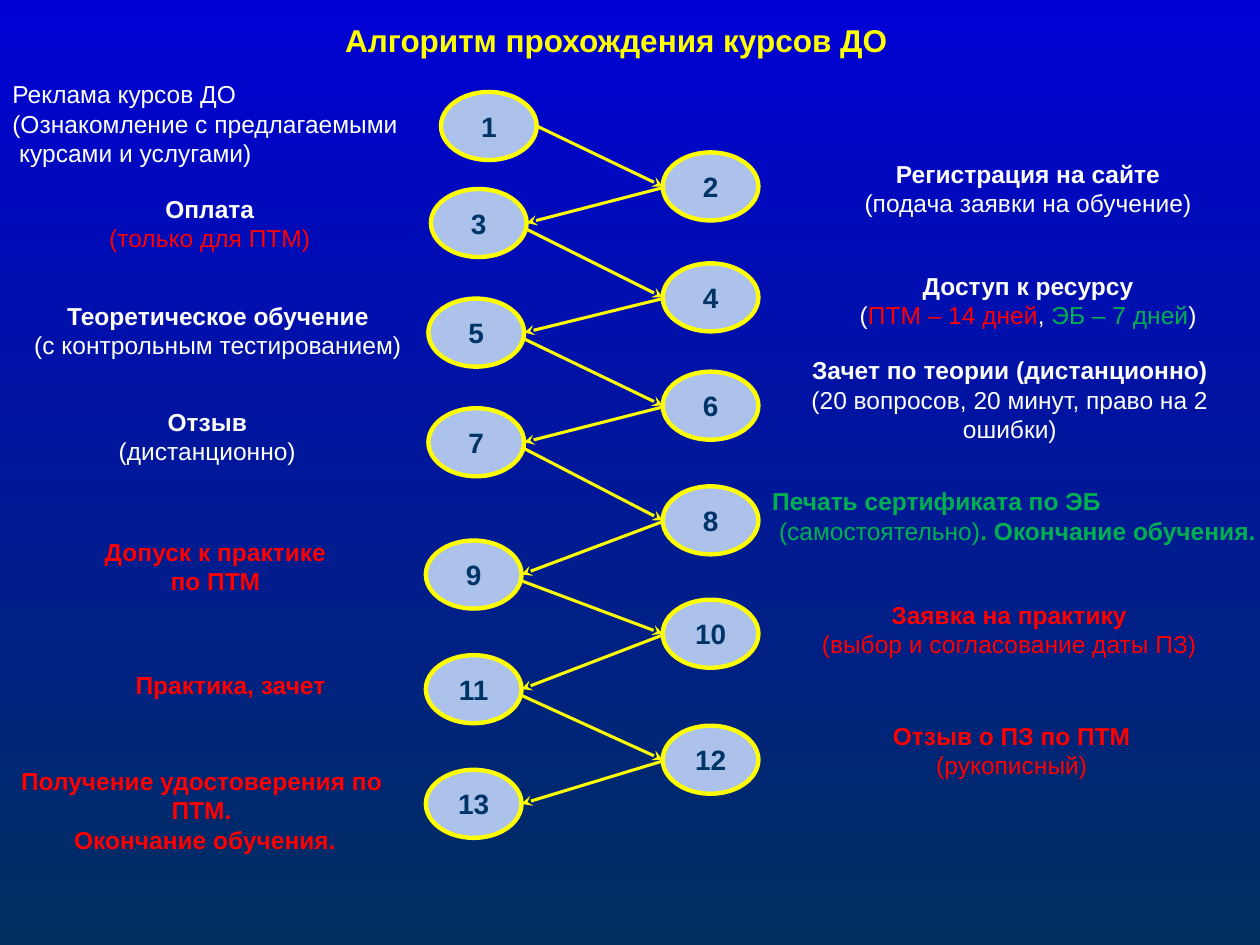
from dataclasses import dataclass
from itertools import pairwise

import pptx
import pptx.dml.color
import pptx.enum.shapes
import pptx.enum.text
import pptx.oxml
import pptx.oxml.ns
import pptx.util

Inches = pptx.util.Inches
Pt = pptx.util.Pt
ALIGN = pptx.enum.text.PP_ALIGN

WHITE, YELLOW, RED, GREEN = "FFFFFF", "FFFF00", "FF0000", "00B050"
NODE_FILL, NODE_TEXT = "ADC2EB", "003366"
NODE_W, NODE_H = 0.76, 0.54
RIGHT_X = 5.26


@dataclass
class Span:
    text: str
    color: str = WHITE
    bold: bool = False


@dataclass
class Label:
    left: float
    top: float
    width: float
    height: float
    lines: list[list[Span]]
    centered: bool = True
    wrap: bool = True
    size: int = 14


@dataclass
class Node:
    number: int
    left: float
    top: float

    @property
    def middle(self) -> float:
        return self.top + NODE_H / 2


def rgb(color: str) -> pptx.dml.color.RGBColor:
    return pptx.dml.color.RGBColor.from_string(color)


def set_font(font, size: int, color: str, bold: bool) -> None:
    font.name = "Arial"
    font.size = Pt(size)
    font.bold = bold
    font.color.rgb = rgb(color)


def set_background(slide) -> None:
    fill = slide.background.fill
    fill.gradient()
    fill.gradient_angle = 270
    for stop, position, color in zip(fill.gradient_stops, (0, 1), ("0000D4", "002F5E")):
        stop.position = position
        stop.color.rgb = rgb(color)


def add_label(slide, label: Label) -> None:
    sp = slide.shapes.add_textbox(
        Inches(label.left), Inches(label.top), Inches(label.width), Inches(label.height)
    )
    tf = sp.text_frame
    tf.word_wrap = label.wrap
    tf.auto_size = pptx.enum.text.MSO_AUTO_SIZE.SHAPE_TO_FIT_TEXT
    for i, spans in enumerate(label.lines):
        p = tf.add_paragraph() if i else tf.paragraphs[0]
        p.alignment = ALIGN.CENTER if label.centered else ALIGN.LEFT
        for span in spans:
            r = p.add_run()
            r.text = span.text
            font = p.font if len(spans) == 1 else r.font
            set_font(font, label.size, span.color, span.bold)


def add_node(slide, node: Node) -> None:
    sp = slide.shapes.add_shape(
        pptx.enum.shapes.MSO_SHAPE.OVAL,
        Inches(node.left), Inches(node.top), Inches(NODE_W), Inches(NODE_H),
    )
    sp.shadow.inherit = False
    sp.fill.solid()
    sp.fill.fore_color.rgb = rgb(NODE_FILL)
    sp.line.color.rgb = rgb(YELLOW)
    sp.line.width = Pt(2.5)
    tf = sp.text_frame
    tf.vertical_anchor = pptx.enum.text.MSO_ANCHOR.MIDDLE
    p = tf.paragraphs[0]
    p.alignment = ALIGN.CENTER
    p.add_run().text = str(node.number)
    set_font(p.font, 16, NODE_TEXT, True)


def add_arrow(slide, start: Node, end: Node) -> None:
    if start.left < end.left:
        drop = 0.05 if start.number > 1 else 0
        x1, y1 = start.left + NODE_W, start.middle + drop
        x2, y2 = end.left, end.middle
    else:
        x1, y1 = start.left, start.middle + 0.01
        x2, y2 = end.left + NODE_W, end.middle
    cxn = slide.shapes.add_connector(
        pptx.enum.shapes.MSO_CONNECTOR.STRAIGHT,
        Inches(x1), Inches(y1), Inches(x2), Inches(y2),
    )
    cxn.line.color.rgb = rgb(YELLOW)
    cxn.line.width = Pt(1.75)
    tail = pptx.oxml.parse_xml(
        f'<a:tailEnd {pptx.oxml.ns.nsdecls("a")} type="stealth"/>'
    )
    cxn.line._get_or_add_ln().append(tail)
    effects = pptx.oxml.parse_xml(f'<a:effectLst {pptx.oxml.ns.nsdecls("a")}/>')
    cxn._element.spPr.append(effects)


def heading(text: str, color: str = WHITE) -> list[Span]:
    return [Span(text, color, True)]


def detail(text: str, color: str = WHITE) -> list[Span]:
    return [Span(text, color)]


NODES = [
    Node(number, left, top)
    for number, (left, top) in enumerate(
        [
            (3.5, 0.73), (RIGHT_X, 1.21), (3.42, 1.5), (RIGHT_X, 2.09),
            (3.4, 2.37), (RIGHT_X, 2.95), (3.4, 3.24), (RIGHT_X, 3.86),
            (3.38, 4.29), (RIGHT_X, 4.76), (3.38, 5.2), (RIGHT_X, 5.76),
            (3.38, 6.11),
        ],
        start=1,
    )
]

LABELS = [
    Label(2.64, 0.12, 4.55, 0.4, [heading("Алгоритм прохождения курсов ДО", YELLOW)],
          centered=False, wrap=False, size=18),
    Label(0, 0.58, 5, 0.81,
          [detail("Реклама курсов ДО"), detail("(Ознакомление с предлагаемыми"),
           detail(" курсами и услугами)")], centered=False),
    Label(6.18, 1.21, 3.96, 0.57,
          [heading("Регистрация на сайте"), detail("(подача заявки на обучение)")]),
    Label(0.03, 1.49, 3.27, 0.57,
          [heading("Оплата"), detail("(только для ПТМ)", RED)]),
    Label(5.66, 2.1, 5, 0.57,
          [heading("Доступ к ресурсу"),
           [Span("("), Span("ПТМ – 14 дней", RED), Span(", "),
            Span("ЭБ – 7 дней", GREEN), Span(")")]]),
    Label(0, 2.34, 3.46, 0.57,
          [heading("Теоретическое обучение"), detail("(с контрольным тестированием)")]),
    Label(6.03, 2.77, 3.97, 0.81,
          [heading("Зачет по теории (дистанционно)"),
           detail("(20 вопросов, 20 минут, право на 2 ошибки)")]),
    Label(0, 3.18, 3.29, 0.57, [heading("Отзыв"), detail("(дистанционно)")]),
    Label(6.03, 3.81, 4.11, 0.57,
          [heading("Печать сертификата по ЭБ", GREEN),
           [Span(" ", GREEN, True), Span("(самостоятельно)", GREEN),
            Span(". Окончание обучения.", GREEN, True)]], centered=False),
    Label(0.35, 4.21, 2.72, 0.57,
          [heading("Допуск к практике", RED), heading("по ПТМ", RED)]),
    Label(6.26, 4.71, 3.5, 0.57,
          [heading("Заявка на практику", RED),
           detail("(выбор и согласование даты ПЗ)", RED)]),
    Label(0.97, 5.27, 1.72, 0.34, [heading("Практика, зачет", RED)], wrap=False),
    Label(6.18, 5.67, 3.7, 0.57,
          [heading("Отзыв о ПЗ по ПТМ", RED), detail("(рукописный)", RED)]),
    Label(-0.09, 6.03, 3.38, 0.81,
          [heading("Получение удостоверения по ПТМ.", RED),
           heading(" Окончание обучения.", RED)]),
]


def main() -> None:
    prs = pptx.Presentation()
    prs.slide_width, prs.slide_height = Inches(10), Inches(7.5)
    s = prs.slides.add_slide(prs.slide_layouts[6])
    set_background(s)
    for node in NODES:
        add_node(s, node)
    for label in LABELS:
        add_label(s, label)
    for start, end in pairwise(NODES):
        add_arrow(s, start, end)
    prs.save("out.pptx")


if __name__ == "__main__":
    main()
